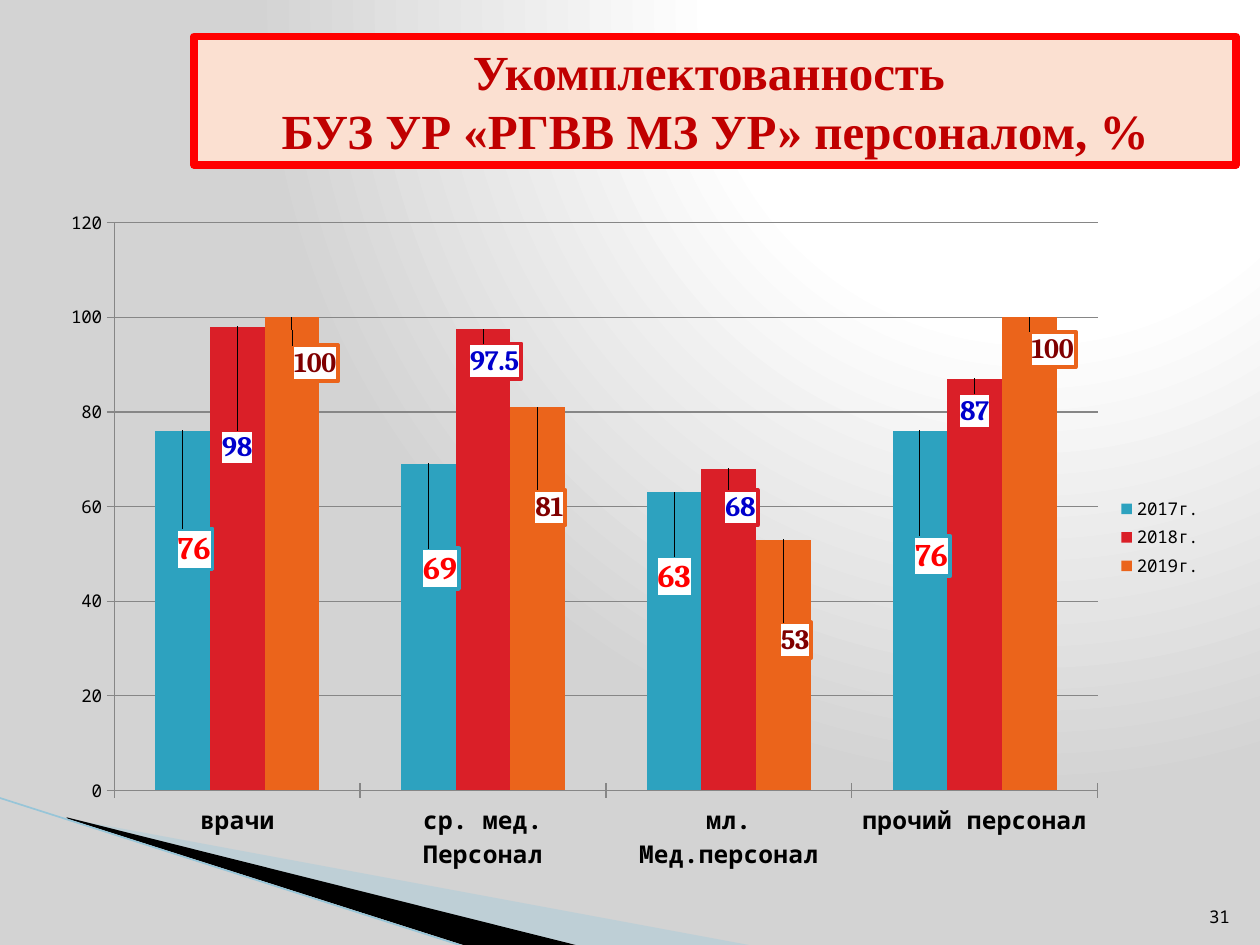
"""Build the staffing level slide with a clustered column chart."""
from pptx import Presentation
from pptx.chart.data import CategoryChartData as ChartData
from pptx.dml.color import RGBColor as RGB
from pptx.enum.chart import XL_CHART_TYPE as Kind, XL_LABEL_POSITION as Place
from pptx.enum.chart import XL_LEGEND_POSITION as Side, XL_TICK_MARK as Tick
from pptx.enum.shapes import MSO_CONNECTOR as Link
from pptx.enum.text import MSO_ANCHOR as Anchor, MSO_AUTO_SIZE as Fit, PP_ALIGN as Align
from pptx.oxml import parse_xml
from pptx.oxml.ns import nsdecls, qn
from pptx.util import Pt

COLORS = {
    "black": "000000", "white": "FFFFFF", "gray": "D3D3D3", "grid": "868686",
    "peach": "FBE0D1", "frame": "FF0000", "title": "C00000",
    "wedge": "A0CBDC", "edge": "97C5D8",
    "teal": "2DA2BF", "red": "DA1F28", "orange": "EB641B",
    "blue": "0000CC", "maroon": "800000",
}
MONO = "Noto Sans Mono"


def tint(name):
    return RGB.from_string(COLORS[name])


def style(font, face, size, color, bold=False):
    font.name, font.size, font.bold = face, Pt(size), bold
    font.color.rgb = tint(color)


deck = Presentation()
deck.slide_width, deck.slide_height = Pt(720), Pt(540)
slide = deck.slides.add_slide(deck.slide_layouts[5])
shapes = slide.shapes

stops = "".join(
    f'<a:gs pos="{pos}"><a:srgbClr val="{COLORS[name]}"/></a:gs>'
    for pos, name in ((0, "white"), (40000, "white"), (100000, "gray")))
slide.element.cSld.insert(0, parse_xml(
    f'<p:bg {nsdecls("p", "a")}><p:bgPr><a:gradFill><a:gsLst>{stops}</a:gsLst>'
    '<a:path path="circle"><a:fillToRect l="65000" b="98000"/></a:path>'
    '</a:gradFill><a:effectLst/></p:bgPr></p:bg>'))

wedges = (
    ("wedge", (39.6, 468.5), ((428.4, 540.5), (328.3, 540.5), (39.6, 468))),
    ("black", (38.2, 467.3), ((329, 540.5), (267.8, 541), (38.9, 468))),
)
for color, start, ends in wedges:
    pen = shapes.build_freeform(*start, scale=Pt(1))
    pen.add_line_segments(ends, close=True)
    wedge = pen.convert_to_shape()
    wedge.shadow.inherit = False
    wedge.fill.solid()
    wedge.fill.fore_color.rgb = tint(color)
    wedge.line.fill.background()
    if color == "wedge":
        wedge.element.spPr.find(".//" + qn("a:srgbClr")).append(
            parse_xml(f'<a:alpha {nsdecls("a")} val="40000"/>'))

edge = shapes.add_connector(Link.STRAIGHT, Pt(-0.7), Pt(455.8), Pt(267.1), Pt(541.4))
edge.line.color.rgb = tint("edge")
edge.line.width = Pt(0.95)
edge.element.spPr.append(parse_xml(f'<a:effectLst {nsdecls("a")}/>'))

title = shapes.title
title.left, title.top, title.width, title.height = Pt(110.9), Pt(20.9), Pt(595.4), Pt(73.4)
title.element.spPr.insert(1, parse_xml(
    f'<a:prstGeom {nsdecls("a")} prst="roundRect"><a:avLst/></a:prstGeom>'))
title.fill.solid()
title.fill.fore_color.rgb = tint("peach")
title.line.color.rgb = tint("frame")
title.line.width = Pt(4.33)
frame = title.text_frame
frame.auto_size, frame.word_wrap = Fit.NONE, True
frame.vertical_anchor = Anchor.MIDDLE
for row, words in enumerate(("Укомплектованность ", "БУЗ УР «РГВВ МЗ УР» персоналом, %")):
    para = frame.add_paragraph() if row else frame.paragraphs[0]
    para.alignment = Align.CENTER
    para.space_before = Pt(0)
    run = para.add_run()
    run.text = words
    style(run.font, "Times New Roman", 28, "title", True)

series = (
    ("2017г.", (76, 69, 63, 76), "teal", 18, "frame",
     ((0.01, 0.21), (0.01, 0.19), (0, 0.16), (0.01, 0.22))),
    ("2018г.", (98, 97.5, 68, 87), "red", 16, "blue",
     ((0, 0.21), (0.01, 0.08), (0.01, 0.09), (0, 0.08))),
    ("2019г.", (100, 81, 53, 100), "orange", 16, "maroon",
     ((0.02, 0.1), (0.01, 0.18), (0.01, 0.18), (0.02, 0.08))),
)
data = ChartData()
data.categories = ("врачи", "ср. мед. Персонал", "мл. Мед.персонал", "прочий персонал")
for name, values, *rest in series:
    data.add_series(name, values)
chart = shapes.add_chart(
    Kind.COLUMN_CLUSTERED, Pt(25.2), Pt(111.6), Pt(668.9), Pt(391), data).chart
chart.has_title = False
style(chart.font, MONO, 10, "black")
chart.has_legend = True
chart.legend.position = Side.RIGHT
chart.legend.include_in_layout = False

area = chart.element.find(".//" + qn("c:plotArea"))
for old in area.findall(qn("c:layout")):
    area.remove(old)
area.insert(0, parse_xml(
    f'<c:layout {nsdecls("c")}><c:manualLayout><c:layoutTarget val="inner"/>'
    '<c:xMode val="edge"/><c:yMode val="edge"/><c:x val="0.06"/><c:y val="0.04"/>'
    '<c:w val="0.84"/><c:h val="0.83"/></c:manualLayout></c:layout>'))

base, scale = chart.category_axis, chart.value_axis
for axis in (base, scale):
    axis.major_tick_mark = Tick.CROSS
    axis.format.line.color.rgb = tint("grid")
style(base.tick_labels.font, MONO, 14, "black", True)
scale.minimum_scale, scale.maximum_scale, scale.major_unit = 0, 120, 20
scale.has_major_gridlines = True
scale.major_gridlines.format.line.color.rgb = tint("grid")

plot = chart.plots[0]
plot.gap_width, plot.overlap = 150, 0
plot.vary_by_categories = False
for bars, (name, values, color, size, ink, shifts) in zip(plot.series, series):
    bars.format.fill.solid()
    bars.format.fill.fore_color.rgb = tint(color)
    tags = bars.data_labels
    tags.show_value = True
    style(tags.font, "Cambria", size, ink, True)
    for spot, (right, down) in enumerate(shifts):
        label = bars.points[spot].data_label
        style(label.font, "Cambria", size, ink, True)
        label.position = Place.OUTSIDE_END
        node = tags._element.findall(qn("c:dLbl"))[spot]
        node.insert(1, parse_xml(
            f'<c:layout {nsdecls("c")}><c:manualLayout><c:x val="{right}"/>'
            f'<c:y val="{down}"/></c:manualLayout></c:layout>'))
        for old in node.findall(qn("c:spPr")):
            node.remove(old)
        node.find(qn("c:txPr")).addprevious(parse_xml(
            f'<c:spPr {nsdecls("c", "a")}><a:solidFill><a:srgbClr val="{COLORS["white"]}"/>'
            f'</a:solidFill><a:ln w="{Pt(2.25)}"><a:solidFill>'
            f'<a:srgbClr val="{COLORS[color]}"/></a:solidFill></a:ln></c:spPr>'))

page = shapes.add_textbox(Pt(681.1), Pt(504.7), Pt(28.8), Pt(28.8)).text_frame
page.word_wrap = True
page.vertical_anchor = Anchor.BOTTOM
page.paragraphs[0].alignment = Align.RIGHT
run = page.paragraphs[0].add_run()
run.text = "31"
style(run.font, MONO, 10, "black")

deck.save("out.pptx")
